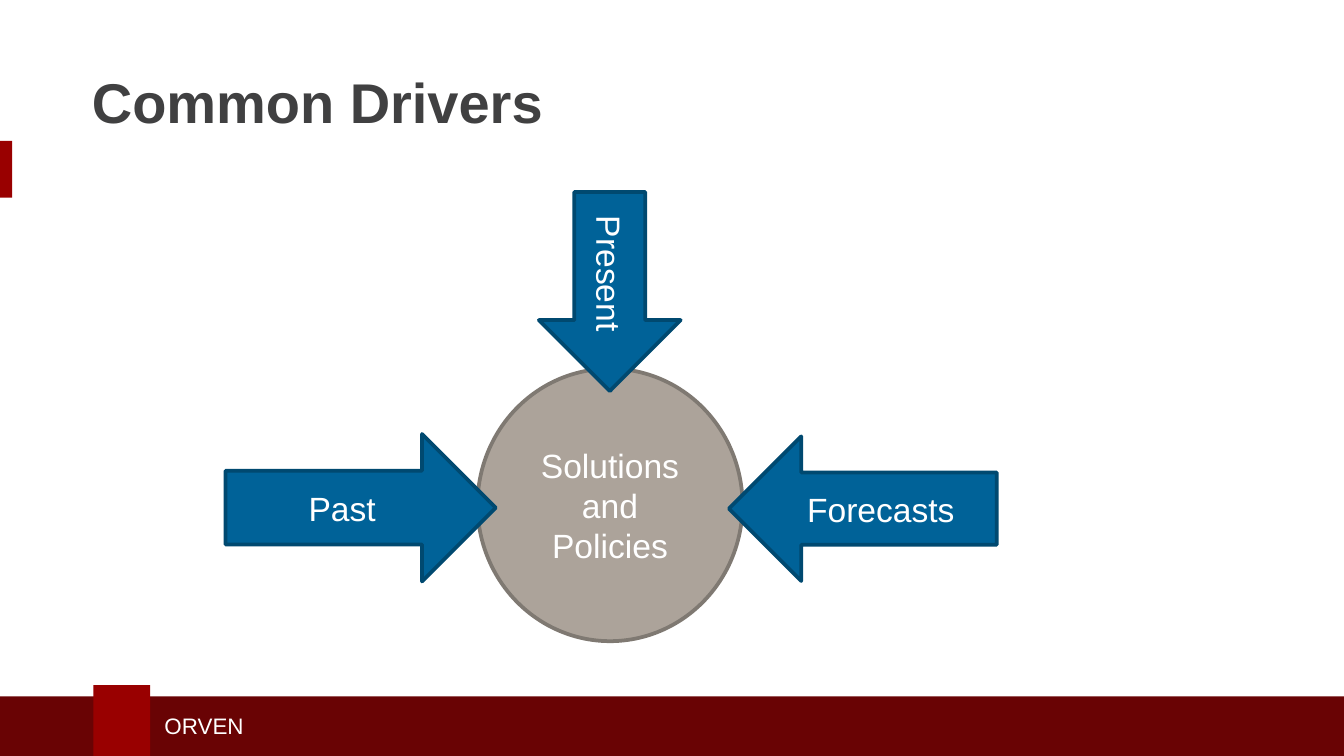
from dataclasses import dataclass

from pptx import Presentation
from pptx.dml.color import RGBColor
from pptx.enum.shapes import MSO_SHAPE
from pptx.enum.text import MSO_ANCHOR, MSO_AUTO_SIZE, PP_ALIGN
from pptx.util import Pt

RECT, OVAL = MSO_SHAPE.RECTANGLE, MSO_SHAPE.OVAL
LEFT_ARROW, RIGHT_ARROW = MSO_SHAPE.LEFT_ARROW, MSO_SHAPE.RIGHT_ARROW
MIDDLE = MSO_ANCHOR.MIDDLE
LEFT, CENTER = PP_ALIGN.LEFT, PP_ALIGN.CENTER
NO_AUTOFIT = MSO_AUTO_SIZE.NONE
TITLE_ONLY = 5
WIDTH, HEIGHT = 720, 405


@dataclass(frozen=True)
class Theme:
    font: str = "Arial"
    title_size: int = 30
    label_size: int = 18
    footer_size: int = 12
    line_width: int = 2
    title: str = "404041"
    white: str = "FFFFFF"
    crimson: str = "990000"
    dark_crimson: str = "690304"
    stone: str = "ACA39A"
    stone_edge: str = "7F7972"
    blue: str = "006298"
    blue_edge: str = "004970"


class SlideBuilder:
    def __init__(self, slide, theme):
        self.slide = slide
        self.theme = theme

    def set_text(self, frame, text, size, color, align, bold=False):
        frame.word_wrap = True
        frame.auto_size = NO_AUTOFIT
        frame.vertical_anchor = MIDDLE
        paragraph = frame.paragraphs[0]
        paragraph.alignment = align
        run = paragraph.add_run()
        run.text = text
        run.font.name = self.theme.font
        run.font.size = Pt(size)
        run.font.bold = bold
        run.font.color.rgb = RGBColor.from_string(color)

    def title(self, text, box):
        title = self.slide.shapes.title
        title.left, title.top, title.width, title.height = map(Pt, box)
        self.set_text(title.text_frame, text, self.theme.title_size,
                      self.theme.title, LEFT, bold=True)

    def block(self, kind, box, fill):
        shape = self.slide.shapes.add_shape(kind, *map(Pt, box))
        shape.shadow.inherit = False
        shape.fill.solid()
        shape.fill.fore_color.rgb = RGBColor.from_string(fill)
        shape.line.fill.background()
        return shape

    def node(self, kind, box, text, fill, edge, rotation=0):
        shape = self.block(kind, box, fill)
        shape.rotation = rotation
        shape.line.color.rgb = RGBColor.from_string(edge)
        shape.line.width = Pt(self.theme.line_width)
        self.set_text(shape.text_frame, text, self.theme.label_size,
                      self.theme.white, CENTER)

    def footer(self, text, box):
        label = self.slide.shapes.add_textbox(*map(Pt, box))
        self.set_text(label.text_frame, text, self.theme.footer_size,
                      self.theme.white, LEFT)


def main():
    deck = Presentation()
    deck.slide_width, deck.slide_height = Pt(WIDTH), Pt(HEIGHT)
    theme = Theme()
    slide = deck.slides.add_slide(deck.slide_layouts[TITLE_ONLY])
    page = SlideBuilder(slide, theme)

    # Side accent and footer band
    band_top, tab_top = 373, 367
    page.block(RECT, (0, 75.5, 6.5, 30.5), theme.crimson)
    page.block(RECT, (0, band_top, WIDTH, HEIGHT - band_top), theme.dark_crimson)
    page.block(RECT, (50, tab_top, 30.5, HEIGHT - tab_top), theme.crimson)
    page.footer("ORVEN", (81, 378, 284.5, 21.5))

    page.title("Common Drivers", (42, 22.5, 630, 63.5))

    # Central outcome
    page.node(OVAL, (255.8, 197.5, 142, 146), "Solutions and Policies",
              theme.stone, theme.stone_edge)

    # Drivers pointing at the outcome
    drivers = [
        ("Forecasts", LEFT_ARROW, (390.5, 233.8, 143.5, 77.5), 0),
        ("Past", RIGHT_ARROW, (120.8, 232.5, 144.8, 79), 0),
        ("Present", RIGHT_ARROW, (273.3, 118.2, 106.7, 76), 90),
    ]
    for text, kind, box, rotation in drivers:
        page.node(kind, box, text, theme.blue, theme.blue_edge, rotation)

    deck.save("out.pptx")


if __name__ == "__main__":
    main()
